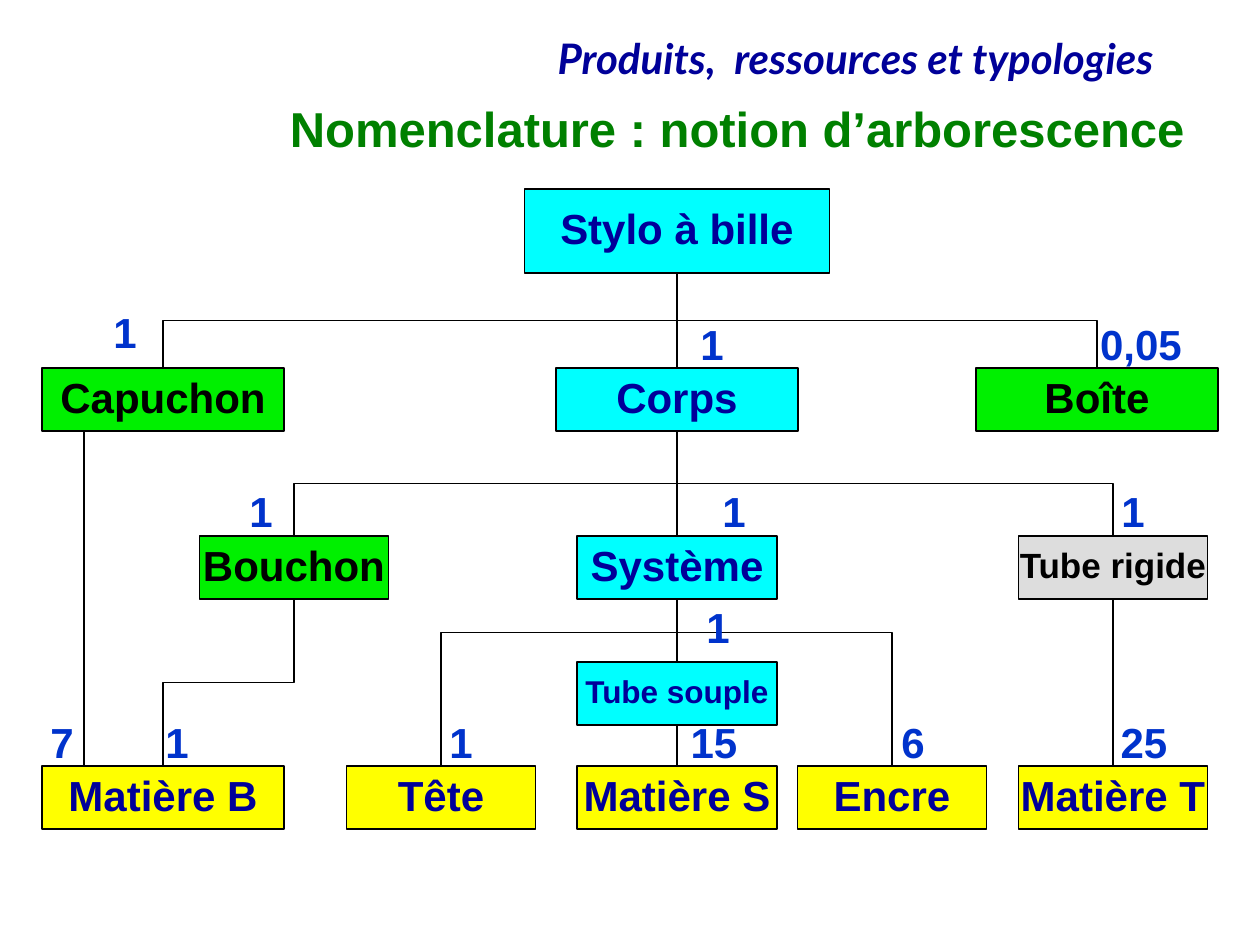
from lxml.etree import SubElement
from pptx import Presentation
from pptx.dml.color import RGBColor
from pptx.enum.shapes import MSO_CONNECTOR, MSO_SHAPE
from pptx.enum.text import MSO_ANCHOR, MSO_AUTO_SIZE, PP_ALIGN
from pptx.oxml.ns import qn
from pptx.util import Emu, Pt

BLACK = RGBColor(0x00, 0x00, 0x00)
NAVY = RGBColor(0x00, 0x00, 0x99)
BLUE = RGBColor(0x00, 0x33, 0xCC)
DARK_GREEN = RGBColor(0x00, 0x80, 0x00)
CYAN = RGBColor(0x00, 0xFF, 0xFF)
GREEN = RGBColor(0x00, 0xF0, 0x00)
YELLOW = RGBColor(0xFF, 0xFF, 0x00)
GREY = RGBColor(0xDD, 0xDD, 0xDD)


def px(length):
    return Emu(round(length * 914400 / 126))


def write(shape, text, size, color, align=PP_ALIGN.CENTER, font="Arial"):
    frame = shape.text_frame
    frame.text = text
    frame.auto_size = MSO_AUTO_SIZE.NONE
    frame.vertical_anchor = MSO_ANCHOR.MIDDLE
    frame.word_wrap = align != PP_ALIGN.CENTER
    paragraph = frame.paragraphs[0]
    paragraph.alignment = align
    paragraph.line_spacing = 0.9
    paragraph.font.name = font
    paragraph.font.size = Pt(size)
    paragraph.font.bold = True
    paragraph.font.color.rgb = color
    return paragraph


presentation = Presentation()
presentation.slide_width, presentation.slide_height = px(1260), px(945)
slide = presentation.slides.add_slide(presentation.slide_layouts[5])

# Course header and slide title
header = slide.shapes.add_textbox(px(158), px(32), px(1008), px(117))
paragraph = write(header, "Produits,  ressources et typologies", 24, NAVY,
                  PP_ALIGN.RIGHT, "Lato")
paragraph.font.italic = True
header.text_frame.vertical_anchor = MSO_ANCHOR.TOP

title = slide.shapes.title
title.left, title.top, title.width, title.height = px(42), px(105), px(1155), px(53)
write(title, "Nomenclature : notion d’arborescence", 28, DARK_GREEN, PP_ALIGN.RIGHT)

# Tree rows and columns
ROOT, PARTS, SUBPARTS, TUBE, MATERIALS = 189, 368, 536, 662, 766
ROOT_HEIGHT, BOX_HEIGHT = 84, 63
ROOT_END = ROOT + ROOT_HEIGHT
PARTS_END, SUBPARTS_END, TUBE_END = (row + BOX_HEIGHT for row in (PARTS, SUBPARTS, TUBE))
LEFT, BOUCHON, TETE, MIDDLE, ENCRE, BOITE, RIGHT = 163, 294, 441, 677, 892, 1097, 1113

# Straight links: x, top, bottom
straight_links = [
    (MIDDLE, ROOT_END, PARTS), (MIDDLE, PARTS_END, SUBPARTS),
    (MIDDLE, SUBPARTS_END, TUBE), (MIDDLE, TUBE_END, MATERIALS),
    (84, PARTS_END, MATERIALS), (RIGHT, SUBPARTS_END, MATERIALS),
]
connectors = [
    slide.shapes.add_connector(MSO_CONNECTOR.STRAIGHT, px(x), px(top), px(x), px(bottom))
    for x, top, bottom in straight_links
]

# Elbow links: parent x, parent bottom, child x, child top, position of the bend
elbow_links = [
    (MIDDLE, ROOT_END, LEFT, PARTS, 0.5), (MIDDLE, ROOT_END, BOITE, PARTS, 0.5),
    (MIDDLE, PARTS_END, BOUCHON, SUBPARTS, 0.5), (MIDDLE, PARTS_END, RIGHT, SUBPARTS, 0.5),
    (MIDDLE, SUBPARTS_END, TETE, MATERIALS, 0.2),
    (MIDDLE, SUBPARTS_END, ENCRE, MATERIALS, 0.2),
    (BOUCHON, SUBPARTS_END, LEFT, MATERIALS, 0.5),
]
for x1, y1, x2, y2, bend in elbow_links:
    # A quarter turn makes the elbow leave its parent downwards
    drop, reach = y2 - y1, abs(x2 - x1)
    left, top = (x1 + x2 - drop) / 2, (y1 + y2 - reach) / 2
    connector = slide.shapes.add_connector(
        MSO_CONNECTOR.ELBOW, px(left), px(top), px(left + drop), px(top + reach))
    properties = connector._element.spPr
    transform = properties.find(qn("a:xfrm"))
    if x2 > x1:
        transform.set("flipH", "1")
        connector.rotation = 270 if hasattr(connector, "rotation") else 0
    transform.set("rot", str((270 if x2 > x1 else 90) * 60000))
    geometry = properties.find(qn("a:prstGeom"))
    adjustments = geometry.find(qn("a:avLst"))
    if adjustments is None:
        adjustments = SubElement(geometry, qn("a:avLst"))
    SubElement(adjustments, qn("a:gd"), name="adj1", fmla=f"val {round(bend * 100000)}")
    connectors.append(connector)

for connector in connectors:
    connector.line.color.rgb = BLACK
    connector.line.width = Pt(0.75)
    SubElement(connector._element.spPr, qn("a:effectLst"))

# Boxes: text, centre x, top, width, height, fill, text colour, text size
boxes = [
    ("Stylo à bille", MIDDLE, ROOT, 305, ROOT_HEIGHT, CYAN, NAVY, 24),
    ("Capuchon", LEFT, PARTS, 242, BOX_HEIGHT, GREEN, BLACK, 24),
    ("Corps", MIDDLE, PARTS, 242, BOX_HEIGHT, CYAN, NAVY, 24),
    ("Boîte", BOITE, PARTS, 242, BOX_HEIGHT, GREEN, BLACK, 24),
    ("Bouchon", BOUCHON, SUBPARTS, 189, BOX_HEIGHT, GREEN, BLACK, 24),
    ("Système", MIDDLE, SUBPARTS, 200, BOX_HEIGHT, CYAN, NAVY, 24),
    ("Tube rigide", RIGHT, SUBPARTS, 189, BOX_HEIGHT, GREY, BLACK, 20),
    ("Tube souple", MIDDLE, TUBE, 200, BOX_HEIGHT, CYAN, NAVY, 18),
    ("Matière B", LEFT, MATERIALS, 242, BOX_HEIGHT, YELLOW, NAVY, 24),
    ("Tête", TETE, MATERIALS, 189, BOX_HEIGHT, YELLOW, NAVY, 24),
    ("Matière S", MIDDLE, MATERIALS, 200, BOX_HEIGHT, YELLOW, NAVY, 24),
    ("Encre", ENCRE, MATERIALS, 189, BOX_HEIGHT, YELLOW, NAVY, 24),
    ("Matière T", RIGHT, MATERIALS, 189, BOX_HEIGHT, YELLOW, NAVY, 24),
]
for text, center, top, width, height, fill, color, size in boxes:
    box = slide.shapes.add_shape(
        MSO_SHAPE.RECTANGLE, px(center - width / 2), px(top), px(width), px(height))
    box.shadow.inherit = False
    box.fill.solid()
    box.fill.fore_color.rgb = fill
    box.line.color.rgb = BLACK
    box.line.width = Pt(0.75)
    write(box, text, size, color)

# Quantities: centre y, then text and centre x
LABEL_HEIGHT = 58
LABEL_WIDTHS = {1: 49, 2: 73, 4: 108}
quantities = {
    335: [("1", 125)],
    347: [("1", 712), ("0,05", 1141)],
    514: [("1", 261), ("1", 734), ("1", 1133)],
    630: [("1", 718)],
    745: [("7", 62), ("1", 177), ("1", 461), ("15", 714), ("6", 913), ("25", 1144)],
}
for middle, labels in quantities.items():
    for text, center in labels:
        width = LABEL_WIDTHS[len(text)]
        label = slide.shapes.add_textbox(
            px(center - width / 2), px(middle - LABEL_HEIGHT / 2), px(width), px(LABEL_HEIGHT))
        write(label, text, 24, BLUE)

presentation.save("out.pptx")
